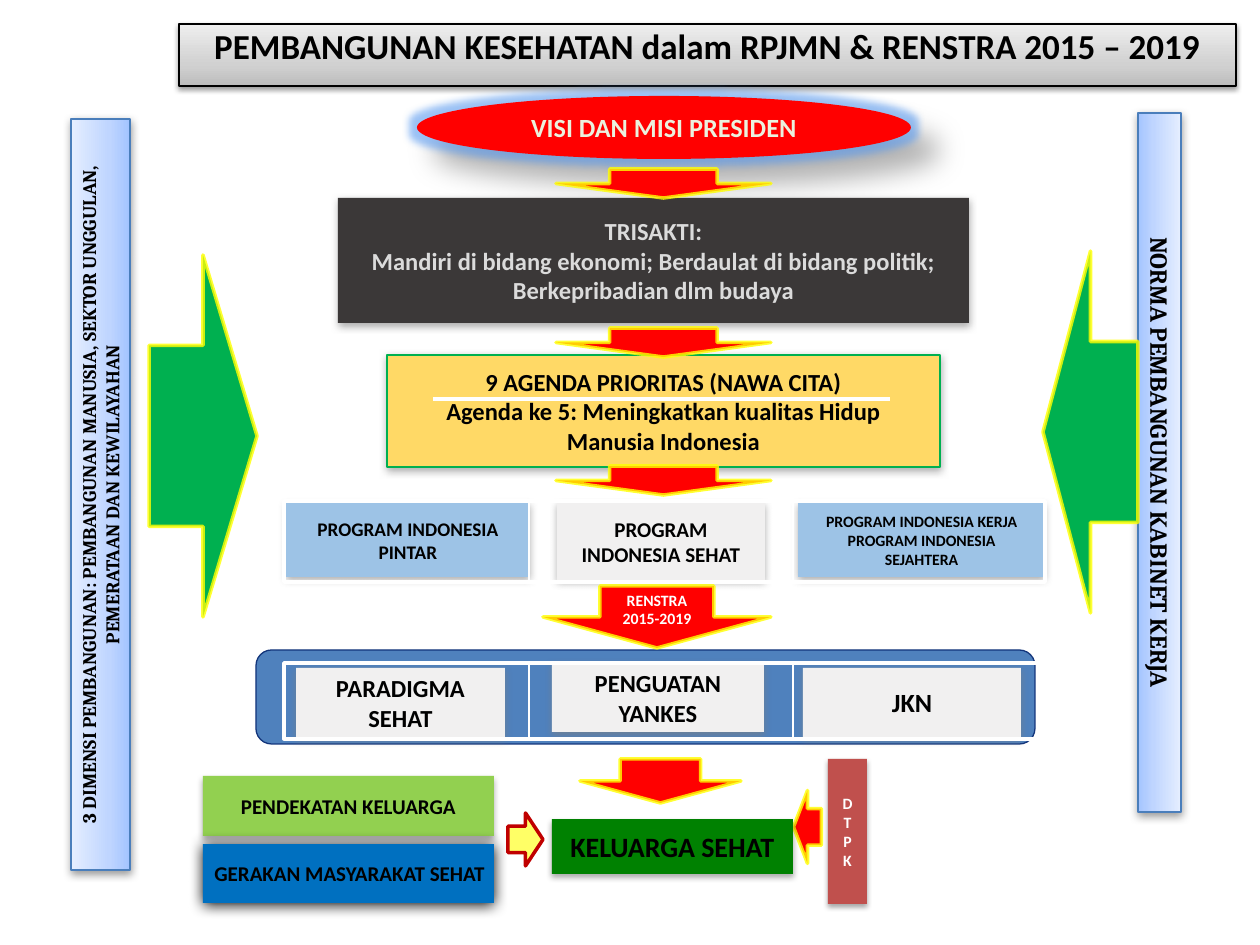
from copy import deepcopy
from dataclasses import dataclass
from typing import Optional

from lxml.etree import SubElement as Sub
from pptx import Presentation
from pptx.dml.color import RGBColor
from pptx.enum.shapes import MSO_CONNECTOR as Conn, MSO_SHAPE as Geo
from pptx.enum.text import MSO_ANCHOR as Anchor, MSO_AUTO_SIZE as Fit, PP_ALIGN as Align
from pptx.oxml.ns import qn
from pptx.util import Pt

SCALE = 914400 / 126
SOFT = ("808080", 63, 4.5, 1.5, 90)
DEEP = ("000000", 32, 3.5, 2.2, 90)
BLUE = ("A3C4FF", "BFD5FF", "E5EEFF")
GRAY = ("BDBDBD", "D1D1D1", "EEEEEE")
RIM = ("FFFF00", 2, 80)


@dataclass
class Box:
    """A preset shape with its paint and text."""
    geo: Geo
    at: tuple
    fill: Optional[str | tuple] = None
    line: Optional[tuple] = None
    shade: Optional[tuple] = None
    text: str = ""
    size: int = 14
    ink: str = "000000"
    font: str = "Calibri"
    align: Align = Align.CENTER
    anchor: Anchor = Anchor.MIDDLE
    inset: tuple = (13, 6)
    turn: int = 0
    flip: bool = False
    stack: bool = False
    glow: str = ""


@dataclass
class Rule:
    """A straight white line."""
    start: tuple
    end: tuple
    width: float = 0.75


def px(num: int) -> int:
    """Turn px into EMU."""
    return round(num * SCALE)


def rgb(code: str) -> RGBColor:
    """Make a colour from its hex string."""
    return RGBColor.from_string(code)


def tint(parent, code: str, alpha: int) -> None:
    """Add a colour with opacity to an effect."""
    node = Sub(parent, qn("a:srgbClr"), val=code)
    Sub(node, qn("a:alpha"), val=str(alpha * 1000))


def paint(shape, box: Box) -> None:
    """Set fill, outline and effects."""
    props = shape._element.spPr
    if isinstance(box.fill, tuple):
        shape.fill.gradient()
        shape.fill.gradient_angle = 90
        stops = props.find(".//" + qn("a:gsLst"))
        stops.insert(1, deepcopy(stops[0]))
        for stop, code, pos in zip(shape.fill.gradient_stops, box.fill, (0, 0.35, 1)):
            stop.color.rgb = rgb(code)
            stop.position = pos
    elif box.fill:
        shape.fill.solid()
        shape.fill.fore_color.rgb = rgb(box.fill)
    else:
        shape.fill.background()
    if box.line:
        code, width, *alpha = box.line
        shape.line.color.rgb = rgb(code)
        shape.line.width = Pt(width)
        if alpha:
            node = props.find(qn("a:ln")).find(".//" + qn("a:srgbClr"))
            Sub(node, qn("a:alpha"), val=str(alpha[0] * 1000))
    else:
        shape.line.fill.background()
    shape.shadow.inherit = False
    effects = props.find(qn("a:effectLst"))
    if box.glow:
        tint(Sub(effects, qn("a:glow"), rad=str(Pt(8))), box.glow, 60)
    if box.shade:
        code, alpha, blur, dist, angle = box.shade
        node = Sub(effects, qn("a:outerShdw"), blurRad=str(Pt(blur)), dist=str(Pt(dist)),
                   dir=str(angle * 60000), rotWithShape="0")
        tint(node, code, alpha)


def write(shape, box: Box) -> None:
    """Fill the text frame, one paragraph a line."""
    frame = shape.text_frame
    frame.word_wrap = True
    frame.auto_size = Fit.NONE
    frame.vertical_anchor = box.anchor
    frame.margin_left = frame.margin_right = px(box.inset[0])
    frame.margin_top = frame.margin_bottom = px(box.inset[1])
    if box.stack:
        frame._txBody.bodyPr.set("vert", "wordArtVert")
    for num, line in enumerate(box.text.split("\n")):
        para = frame.add_paragraph() if num else frame.paragraphs[0]
        para.alignment = box.align
        run = para.add_run()
        run.text = line
        run.font.name = box.font
        run.font.size = Pt(box.size)
        run.font.bold = True
        run.font.color.rgb = rgb(box.ink)


def draw(slide, item: Box | Rule) -> None:
    """Add one shape or line to the slide."""
    if isinstance(item, Rule):
        line = slide.shapes.add_connector(Conn.STRAIGHT, *map(px, item.start + item.end))
        line.line.color.rgb = rgb("FFFFFF")
        line.line.width = Pt(item.width)
        Sub(line._element.spPr, qn("a:effectLst"))
        return
    shape = slide.shapes.add_shape(item.geo, *map(px, item.at))
    shape.rotation = item.turn
    if item.flip:
        shape._element.spPr.xfrm.set("flipH", "1")
    paint(shape, item)
    if item.text:
        write(shape, item)


def head(slide, box: Box) -> None:
    """Move and format the title placeholder."""
    title = slide.shapes.title
    title.left, title.top, title.width, title.height = map(px, box.at)
    paint(title, box)
    write(title, box)
    title.text_frame.paragraphs[0].line_spacing = 0.9


def card(at: tuple, text: str, size: int = 14, fill: str = "F1F0F0", **more) -> Box:
    """Make a text card with a soft shadow."""
    return Box(Geo.RECTANGLE, at, fill, shade=SOFT, text=text, size=size, **more)


def down(at: tuple, **more) -> Box:
    """Make a red down arrow with a yellow rim."""
    return Box(Geo.DOWN_ARROW, at, "FF0000", RIM, **more)


def side(at: tuple, text: str, size: int, turn: int) -> Box:
    """Make a turned side bar."""
    return Box(Geo.RECTANGLE, at, BLUE, ("4A7EBB", 0.75), ("000000", 38, 5, 1.6, 90), text,
               size, font="Cambria", anchor=Anchor.TOP, turn=turn)


def base(at: tuple, fill: str, text: str, size: int = 12, shade: tuple = DEEP, **more) -> Box:
    """Make a card of the bottom row."""
    return Box(Geo.RECTANGLE, at, fill, shade=shade, text=text, size=size, **more)


def grid(top: int, high: int) -> list:
    """Make a white frame with two dividers."""
    frame = Box(Geo.RECTANGLE, (284, top, 761, high), line=("FFFFFF", 2))
    return [frame] + [Rule((x, top), (x, top + high)) for x in (529, 793)]


TITLE = Box(Geo.RECTANGLE, (179, 24, 1057, 62), GRAY, ("000000", 0.75),
            ("000000", 38, 3.1, 1.6, 90),
            "PEMBANGUNAN KESEHATAN dalam RPJMN & RENSTRA 2015 – 2019", 20,
            anchor=Anchor.TOP, inset=(9, 5))

ITEMS = [
    Box(Geo.ROUNDED_RECTANGLE, (256, 650, 779, 94), "4F81BD", ("13357B", 0.75)),
    Box(Geo.OVAL, (417, 96, 494, 63), "FF0000", shade=("000000", 30, 15, 18, 45),
        text="VISI DAN MISI PRESIDEN", size=15, ink="EBF1DE", glow="5B9BF0"),
    card((387, 355, 553, 112), "9 AGENDA PRIORITAS (NAWA CITA)\n"
         "Agenda ke 5: Meningkatkan kualitas Hidup Manusia Indonesia",
         fill="FFD966", line=("00B050", 0.75)),
    card((338, 198, 631, 125), "TRISAKTI:\nMandiri di bidang ekonomi; "
         "Berdaulat di bidang politik; Berkepribadian dlm budaya", fill="3B3838", ink="DBDBDB"),
    card((557, 503, 208, 77), "PROGRAM INDONESIA SEHAT", 12),
    card((286, 503, 244, 74), "PROGRAM INDONESIA PINTAR", 11, "9DC3E6"),
    card((798, 503, 247, 74), "PROGRAM INDONESIA KERJA\nPROGRAM INDONESIA SEJAHTERA", 9, "9DC3E6"),
    card((552, 663, 212, 69), "PENGUATAN YANKES"),
    card((296, 668, 209, 69), "PARADIGMA SEHAT"),
    card((803, 668, 218, 69), "JKN", 15),
    *[down((556, y, 215, 29)) for y in (169, 328, 466)],
    *grid(501, 81),
    down((543, 586, 228, 62), text="RENSTRA 2015-2019", size=9, ink="FFFFFF"),
    side((-275, 465, 751, 59), "3 DIMENSI PEMBANGUNAN: PEMBANGUNAN MANUSIA, SEKTOR UNGGULAN, "
         "PEMERATAAN DAN KEWILAYAHAN", 11, 270),
    side((810, 441, 699, 43), "NORMA PEMBANGUNAN KABINET KERJA", 14, 90),
    Box(Geo.RIGHT_ARROW, (149, 255, 108, 362), "00B050", RIM),
    Box(Geo.RIGHT_ARROW, (1043, 251, 95, 362), "00B050", RIM, flip=True),
    base((828, 759, 39, 145), "C0504D", "DTPK", 9, ("000000", 35, 3.1, 1.8, 90),
         ink="FFFFFF", stack=True),
    Rule((433, 399), (890, 399), 2.25),
    *grid(663, 76),
    down((580, 759, 161, 44)),
    down((771, 813, 73, 28), turn=90),
    base((552, 819, 241, 55), "008101", "KELUARGA SEHAT", 16),
    base((203, 776, 291, 60), "92D050", "PENDEKATAN KELUARGA", inset=(9, 5)),
    Box(Geo.RIGHT_ARROW, (508, 813, 35, 53), "FFFF66", ("C00000", 2)),
    base((203, 844, 291, 59), "0070C0", "GERAKAN MASYARAKAT SEHAT",
         shade=("000000", 100, 8.5, 1, 90), align=Align.RIGHT, inset=(9, 5)),
]


def main() -> None:
    """Build and save the slide."""
    deck = Presentation()
    deck.slide_width, deck.slide_height = px(1260), px(945)
    slide = deck.slides.add_slide(deck.slide_layouts[5])
    head(slide, TITLE)
    for item in ITEMS:
        draw(slide, item)
    deck.save("out.pptx")


if __name__ == "__main__":
    main()
